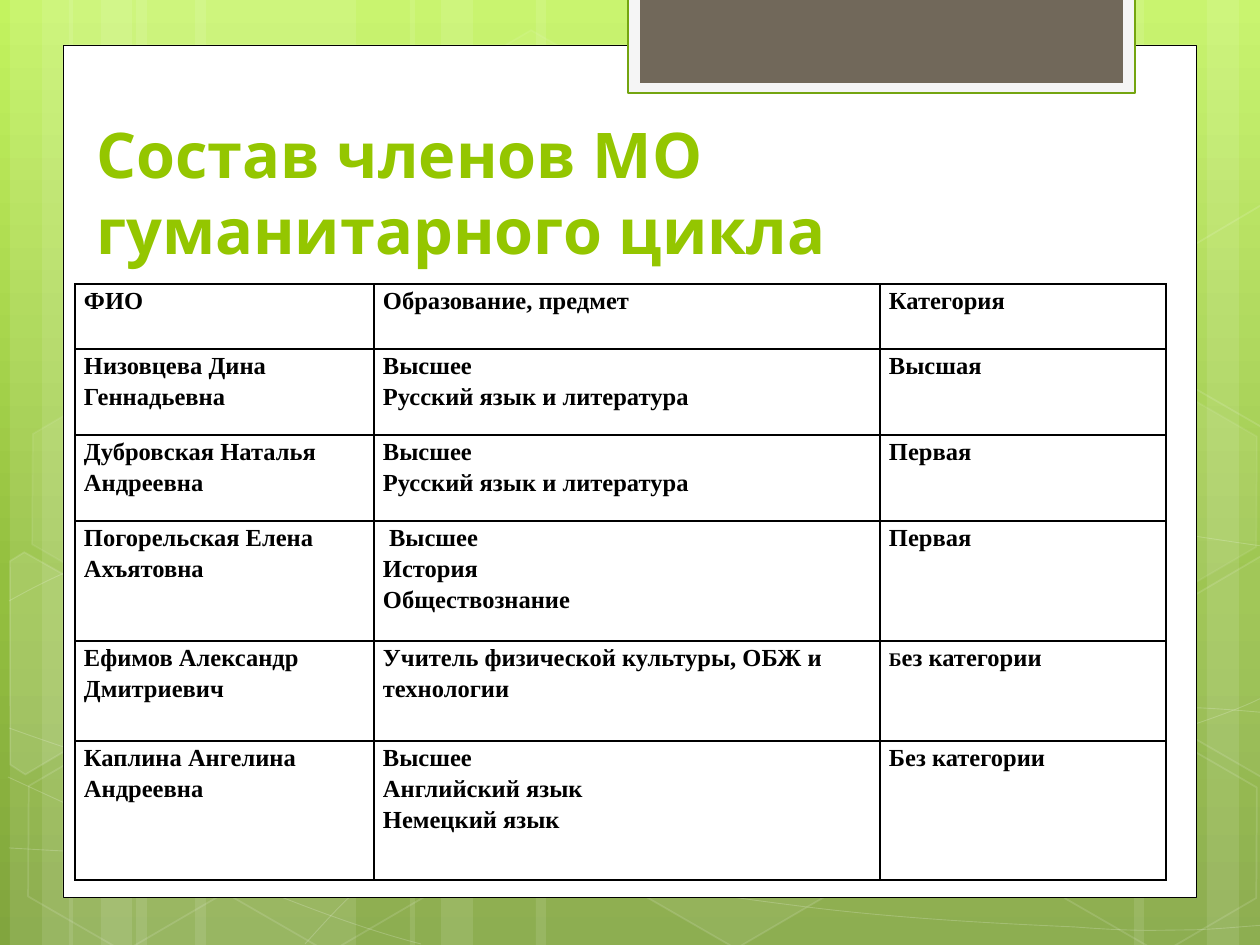
from copy import deepcopy
from math import cos, radians, sin
from lxml import etree
from pptx import Presentation
from pptx.dml.color import RGBColor
from pptx.enum.shapes import MSO_SHAPE
from pptx.enum.text import MSO_ANCHOR, PP_ALIGN
from pptx.oxml.ns import qn
from pptx.util import Pt

RECT, HEX = MSO_SHAPE.RECTANGLE, MSO_SHAPE.HEXAGON
BOTTOM, LEFT = MSO_ANCHOR.BOTTOM, PP_ALIGN.LEFT
WHITE = RGBColor(0xFF, 0xFF, 0xFF)
BLACK = RGBColor(0x00, 0x00, 0x00)
LIME = RGBColor(0x94, 0xC6, 0x00)
GREEN = RGBColor(0x74, 0xA5, 0x10)
PALE = RGBColor(0xF5, 0xF5, 0xF5)
BROWN = RGBColor(0x71, 0x68, 0x5A)
SKY = [(0, RGBColor(0xC3, 0xF3, 0x5F)), (0.62, RGBColor(0x93, 0xBF, 0x3F)),
       (1, RGBColor(0x81, 0xA5, 0x3E))]
SCALE = 914400 / 126
TILT = 30

TITLE = "Состав членов МО гуманитарного цикла"
ROWS = [
    ("ФИО", "Образование, предмет", "Категория"),
    ("Низовцева Дина Геннадьевна", "Высшее\nРусский язык и литература", "Высшая"),
    ("Дубровская Наталья Андреевна", "Высшее\nРусский язык и литература", "Первая"),
    ("Погорельская Елена Ахъятовна", " Высшее\nИстория\nОбществознание", "Первая"),
    ("Ефимов Александр Дмитриевич",
     "Учитель физической культуры, ОБЖ и технологии", "Без категории"),
    ("Каплина Ангелина Андреевна", "Высшее\nАнглийский язык\nНемецкий язык",
     "Без категории"),
]
SMALL = (4, 2)  # the cell whose first letter is set smaller
WIDTHS = [299, 506, 286]
HEIGHTS = [65, 86, 86, 120, 100, 139]

# Backdrop: stripes as (left, width)
STRIPES = [(136, 220), (10, 63), (42, 105), (195, 220), (69, 63), (101, 105),
           (924, 220), (1207, 63), (1134, 105), (536, 388), (410, 63), (441, 105)]
# Curves: a start point, then three points for each Bezier segment
CURVES = [
    [(9, 848), (77, 852), (145, 856), (239, 854), (334, 853), (451, 851), (577, 838),
     (703, 825), (882, 801), (998, 777), (1112, 753), (1231, 716), (1269, 694)],
    [(9, 601), (45, 581), (82, 562), (152, 543), (224, 524), (326, 496), (437, 488),
     (549, 479), (685, 478), (824, 488), (963, 498), (1193, 537), (1269, 547)],
    [(8, 777), (160, 847), (311, 916), (421, 944)],
    [(9, 728), (48, 742), (88, 756), (161, 776), (234, 795), (344, 827), (450, 848),
     (554, 869), (687, 892), (791, 905), (896, 919), (1008, 924), (1075, 927),
     (1140, 932), (1158, 930), (1191, 930), (1223, 929), (1246, 926), (1269, 925)],
    [(305, 944), (328, 919), (350, 893), (381, 871), (411, 848), (454, 823), (489, 805),
     (524, 788), (546, 780), (592, 767), (638, 754), (722, 737), (766, 728),
     (811, 720), (818, 720), (857, 717), (897, 713), (958, 709), (1000, 708),
     (1045, 707), (1116, 708), (1116, 708), (1144, 708), (1172, 708), (1201, 708),
     (1223, 709), (1245, 711), (1268, 713)],
]
# Hexagons: left, top, fill opacity, line opacity in percent
HEXES = [(421, 45, 4, 8), (626, 742, 6, 12), (14, 745, 0, 12), (18, 393, 7, 8),
         (219, 746, 0, 12), (1051, 747, 0, 12), (1051, 396, 7, 8)]
# Hexagons cut by the slide edge: centre, points, fill opacity
CUTS = [
    ((45, 674), [(10, 561), (24, 552), (121, 607), (120, 718), (25, 774), (10, 765)], 10),
    ((1241, 655), [(1167, 611), (1261, 556), (1271, 562), (1271, 772), (1263, 777),
                   (1167, 722)], 4),
    ((1241, 304), [(1167, 261), (1261, 205), (1273, 212), (1271, 422), (1263, 427),
                   (1167, 372)], 0),
]


def px(n):
    return round(n * SCALE)


def fade(fill, pct):
    """Give a solid fill an opacity in percent."""
    tag = fill._xPr.find(".//" + qn("a:srgbClr"))
    etree.SubElement(tag, qn("a:alpha"), val=str(pct * 1000))


def paint(shape, color=None, clear=100, edge=None, width=1, dim=100):
    shape.shadow.inherit = False
    if color is None or not clear:
        shape.fill.background()
    else:
        shape.fill.solid()
        shape.fill.fore_color.rgb = color
        if clear < 100:
            fade(shape.fill, clear)
    if edge is None:
        shape.line.fill.background()
    else:
        shape.line.color.rgb = edge
        shape.line.width = Pt(width)
        if dim < 100:
            fade(shape.line.fill, dim)


def block(kind, x, y, w, h, **look):
    shape = slide.shapes.add_shape(kind, px(x), px(y), px(w), px(h))
    paint(shape, **look)
    return shape


def outline(points, close, **look):
    pen = slide.shapes.build_freeform(*points[0], scale=SCALE)
    pen.add_line_segments(points[1:], close=close)
    shape = pen.convert_to_shape()
    paint(shape, **look)
    return shape


def bend(shape):
    """Join each three line steps into one Bezier segment."""
    steps = list(shape._element.iter(qn("a:lnTo")))
    for i in range(0, len(steps), 3):
        curve = etree.Element(qn("a:cubicBezTo"))
        steps[i].addprevious(curve)
        for step in steps[i:i + 3]:
            curve.append(step[0])
            step.getparent().remove(step)


def turn(point, mid, angle):
    c, s = cos(radians(angle)), sin(radians(angle))
    x, y = point[0] - mid[0], point[1] - mid[1]
    return mid[0] + x * c - y * s, mid[1] + x * s + y * c


def style(run, name, size, color):
    for key, val in {"name": name, "size": Pt(size), "bold": True}.items():
        setattr(run.font, key, val)
    run.font.color.rgb = color


def border(cell):
    props = cell._tc.get_or_add_tcPr()
    for i, side in enumerate("LRTB"):
        line = etree.Element(qn("a:ln" + side), w=str(Pt(1)))
        fill = etree.SubElement(line, qn("a:solidFill"))
        etree.SubElement(fill, qn("a:srgbClr"), val=str(BLACK))
        props.insert(i, line)


deck = Presentation()
deck.slide_width, deck.slide_height = px(1260), px(945)
slide = deck.slides.add_slide(deck.slide_layouts[6])

# Background gradient, top to bottom
sky = slide.background.fill
sky.gradient()
sky.gradient_angle = 270
first = slide._element.find(".//" + qn("a:gs"))
first.addnext(deepcopy(first))
for stop, (pos, color) in zip(sky.gradient_stops, SKY):
    stop.position = pos
    stop.color.rgb = color

# Backdrop pattern
for x, w in STRIPES:
    block(RECT, x, 0, w, 945, color=WHITE, clear=10)
for points in CURVES:
    bend(outline(points, False, edge=WHITE, width=0.5, dim=20))
for x, y, clear, dim in HEXES:
    comb = block(HEX, x, y, 220, 192, color=WHITE, clear=clear, edge=WHITE, dim=dim)
    comb.adjustments[0] = 0.285
    comb.rotation = TILT
for mid, points, clear in CUTS:
    flat = [turn(p, mid, -TILT) for p in points]
    outline(flat, True, color=WHITE, clear=clear, edge=WHITE, dim=12).rotation = TILT

# Panel and tab
block(RECT, 63, 45, 1134, 853, color=WHITE, edge=BLACK, width=0.5)
block(RECT, 628, -3, 507, 96, color=PALE, edge=GREEN, width=1.25)
block(RECT, 640, -3, 483, 86, color=BROWN)

# Title
frame = slide.shapes.add_textbox(px(84), px(116), px(1081), px(157)).text_frame
for key, val in {"word_wrap": True, "vertical_anchor": BOTTOM}.items():
    setattr(frame, key, val)
para = frame.paragraphs[0]
para.alignment = LEFT
run = para.add_run()
run.text = TITLE
style(run, "League Spartan", 36, LIME)

# Table of members
table = slide.shapes.add_table(len(ROWS), len(WIDTHS), px(75), px(284),
                               px(sum(WIDTHS)), px(sum(HEIGHTS))).table
table.first_row = table.horz_banding = False
for col, w in zip(table.columns, WIDTHS):
    col.width = px(w)
for row, h in zip(table.rows, HEIGHTS):
    row.height = px(h)
for r, texts in enumerate(ROWS):
    for c, text in enumerate(texts):
        cell = table.cell(r, c)
        cell.margin_left = cell.margin_right = px(9)
        cell.margin_top = cell.margin_bottom = 0
        cell.fill.background()
        border(cell)
        cell.text = text
        for para in cell.text_frame.paragraphs:
            para.line_spacing = 1.15
            for run in para.runs:
                style(run, "Times New Roman", 14, BLACK)
        if (r, c) == SMALL:
            run.text = text[0]
            run.font.size = Pt(11)
            rest = para.add_run()
            rest.text = text[1:]
            style(rest, "Times New Roman", 14, BLACK)

deck.save("out.pptx")
